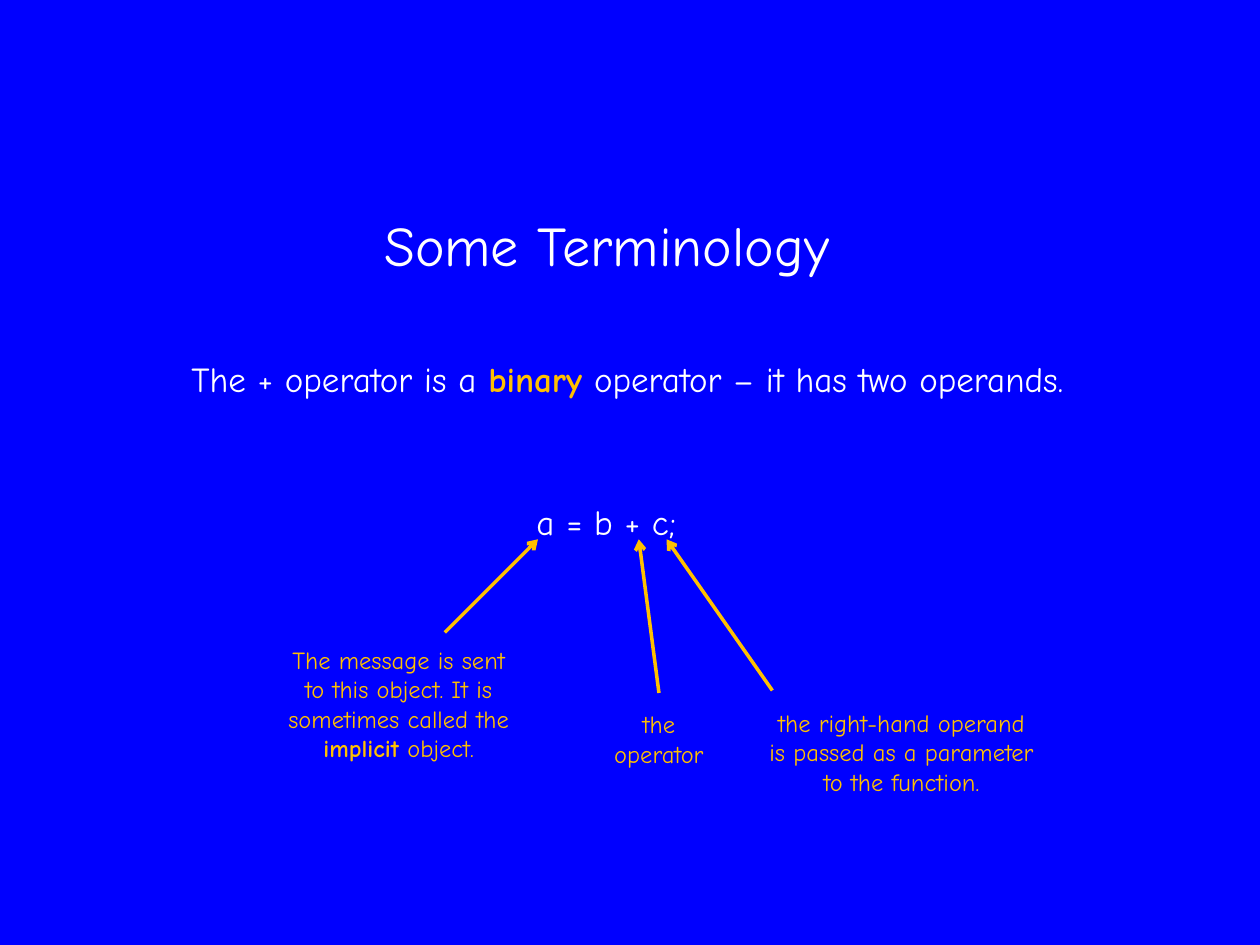
from lxml import etree
from pptx import Presentation
from pptx.dml.color import RGBColor
from pptx.enum import shapes, text
from pptx.oxml.ns import qn
from pptx.util import Inches, Pt

COLORS = {"background": "0000FF", "body": "FFFFFF", "accent": "FFC000"}
FONT = "Comic Neue"
LEFT, CENTER = text.PP_ALIGN.LEFT, text.PP_ALIGN.CENTER

STYLES = {
    "title": {"size": 32, "color": "body", "align": LEFT},
    "body": {"size": 20, "color": "body", "align": LEFT},
    "note": {"size": 14, "color": "accent", "align": CENTER},
}

# style, (left, top, width, height), lines; text between asterisks is a bold key term
TEXTS = [
    ("body", (1.42, 2.79, 7.73, 0.44),
     ["The + operator is a *binary* operator – it has two operands."]),
    ("title", (2.95, 1.62, 4.02, 0.64), ["Some Terminology"]),
    ("body", (4.16, 3.92, 1.36, 0.44), ["a = b + c;"]),
    ("note", (2.1, 5.07, 2.13, 1.04),
     ["The message is sent", "to this object. It is",
      "sometimes called the", "*implicit* object."]),
    ("note", (4.73, 5.58, 1, 0.57), ["the", "operator"]),
    ("note", (5.93, 5.57, 2.45, 0.81),
     ["the right-hand operand", "is passed as a parameter", "to the function."]),
]

# Each arrow runs from a note up to the expression
ARROW_TIP_Y = 4.28
ARROWS = [((3.53, 5.02), 4.27), ((5.23, 5.5), 5.07), ((6.13, 5.48), 5.29)]


def rgb(name):
    return RGBColor.from_string(COLORS[name])


def add_text(slide, style_name, box, lines):
    style = STYLES[style_name]
    tf = slide.shapes.add_textbox(*map(Inches, box)).text_frame
    tf.word_wrap = False
    tf.auto_size = text.MSO_AUTO_SIZE.SHAPE_TO_FIT_TEXT
    for i, line in enumerate(lines):
        p = tf.add_paragraph() if i else tf.paragraphs[0]
        p.alignment = style["align"]
        for j, part in enumerate(line.split("*")):
            if not part:
                continue
            is_term = j % 2 == 1
            r = p.add_run()
            r.text = part
            formats = {"name": FONT, "size": Pt(style["size"]), "bold": is_term}
            for key, value in formats.items():
                setattr(r.font, key, value)
            r.font.color.rgb = rgb("accent" if is_term else style["color"])


def add_arrow(slide, start, end):
    arrow = slide.shapes.add_connector(
        shapes.MSO_CONNECTOR.STRAIGHT, *map(Inches, start + end))
    arrow.line.color.rgb = rgb("accent")
    arrow.line.width = Pt(2)
    sp_pr = arrow.element.spPr
    etree.SubElement(sp_pr.find(qn("a:ln")), qn("a:tailEnd"), type="arrow")
    etree.SubElement(sp_pr, qn("a:effectLst"))


def main():
    prs = Presentation()
    prs.slide_width, prs.slide_height = Inches(10), Inches(7.5)
    slide = prs.slides.add_slide(prs.slide_layouts[6])
    fill = slide.background.fill
    fill.solid()
    fill.fore_color.rgb = rgb("background")
    for item in TEXTS:
        add_text(slide, *item)
    for start, tip_x in ARROWS:
        add_arrow(slide, start, (tip_x, ARROW_TIP_Y))
    prs.save("out.pptx")


if __name__ == "__main__":
    main()
